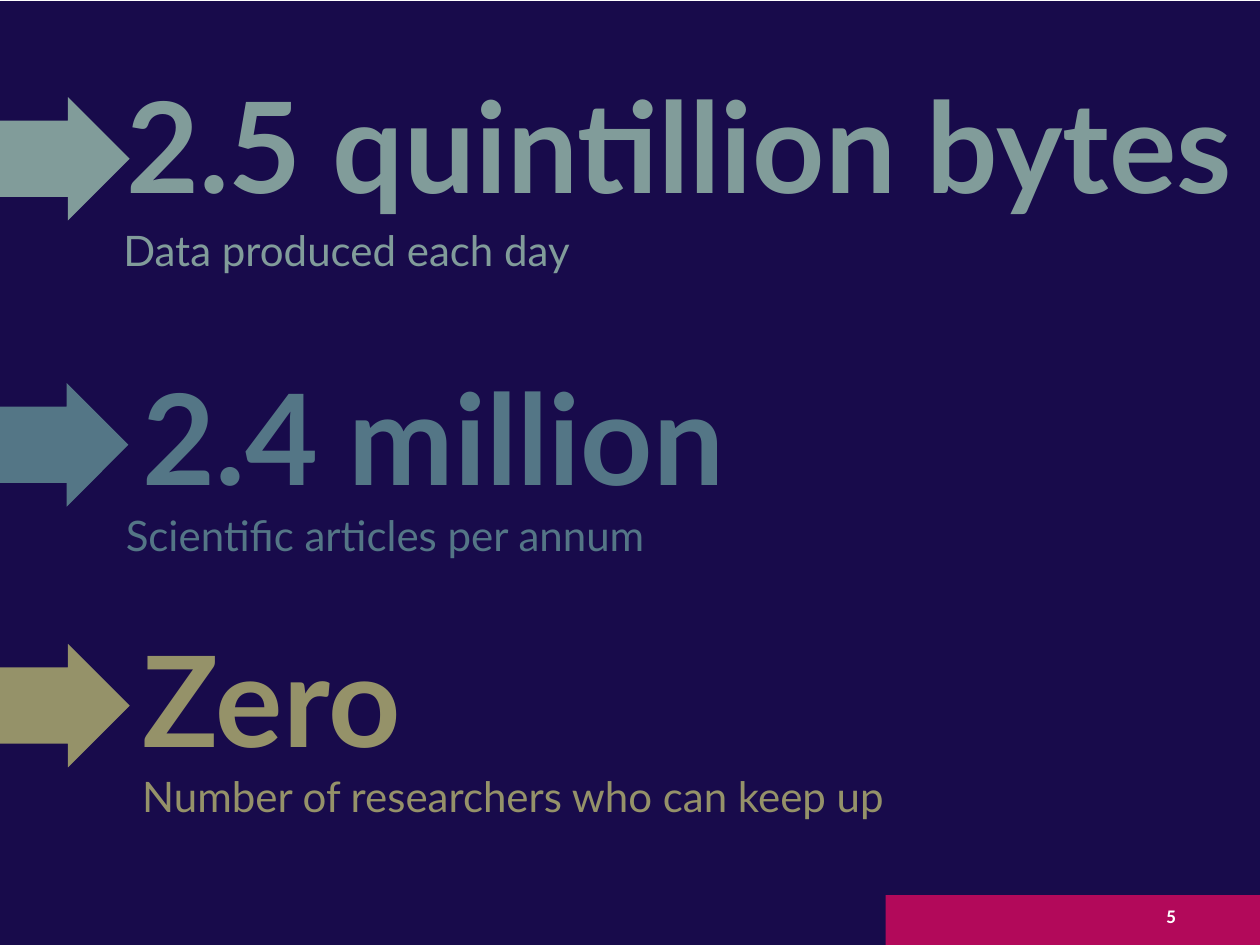
from pptx import Presentation
from pptx.dml.color import RGBColor
from pptx.enum.shapes import MSO_SHAPE
from pptx.enum.text import MSO_ANCHOR, MSO_AUTO_SIZE, PP_ALIGN
from pptx.util import Inches, Pt

RECTANGLE = MSO_SHAPE.RECTANGLE
RIGHT_ARROW = MSO_SHAPE.RIGHT_ARROW
TOP, BOTTOM = MSO_ANCHOR.TOP, MSO_ANCHOR.BOTTOM
LEFT = PP_ALIGN.LEFT
NO_AUTOFIT = MSO_AUTO_SIZE.NONE

NAVY = RGBColor(0x18, 0x0B, 0x4B)
MAGENTA = RGBColor(0xB2, 0x09, 0x5A)
SAGE = RGBColor(0x81, 0x9C, 0x9A)
TEAL = RGBColor(0x54, 0x76, 0x86)
OLIVE = RGBColor(0x95, 0x92, 0x69)
WHITE = RGBColor(0xFF, 0xFF, 0xFF)


class SlideBuilder:
    """Holds the text style and the slide being filled."""

    font_name = "Lato"
    inset = 0.1
    line_spacing = 0.9

    def __init__(self, slide):
        self.slide = slide

    def block(self, kind, left, top, width, height, color, line_width=None):
        shape = self.slide.shapes.add_shape(
            kind, Inches(left), Inches(top), Inches(width), Inches(height))
        shape.shadow.inherit = False
        shape.fill.solid()
        shape.fill.fore_color.rgb = color
        if line_width:
            shape.line.color.rgb = color
            shape.line.width = Pt(line_width)
        else:
            shape.line.fill.background()
        return shape

    def arrow(self, left, top, color):
        shape = self.block(RIGHT_ARROW, left, top, 1.03, 0.98, color)
        shape.adjustments[0] = 0.618
        shape.adjustments[1] = 0.5

    def format_text(self, shape, text, size, color, bold, anchor):
        frame = shape.text_frame
        frame.text = text
        frame.word_wrap = True
        frame.auto_size = NO_AUTOFIT
        frame.vertical_anchor = anchor
        frame.margin_left = frame.margin_right = Inches(self.inset)
        frame.margin_top = frame.margin_bottom = Inches(self.inset)
        paragraph = frame.paragraphs[0]
        paragraph.alignment = LEFT
        paragraph.line_spacing = self.line_spacing
        font = paragraph.runs[0].font
        font.name, font.size, font.bold = self.font_name, Pt(size), bold
        font.color.rgb = color

    def text(self, text, left, top, width, height, size, color,
             bold=False, anchor=TOP):
        box = self.slide.shapes.add_textbox(
            Inches(left), Inches(top), Inches(width), Inches(height))
        self.format_text(box, text, size, color, bold, anchor)
        return box

    def title(self, text, left, top, width, height, size, color):
        title = self.slide.shapes.title
        title.left, title.top = Inches(left), Inches(top)
        title.width, title.height = Inches(width), Inches(height)
        self.format_text(title, text, size, color, True, BOTTOM)
        # Bring the title in front of the background panel
        title.element.getparent().append(title.element)

    def page_number(self, number):
        box = self.text(number, 9.16, 7.13, 0.6, 0.4, 11, WHITE, bold=True)
        box.text_frame.margin_top = box.text_frame.margin_bottom = Inches(0.05)
        paragraph = box.text_frame.paragraphs[0]
        paragraph.line_spacing = 1.0
        paragraph.runs[0].font.name = "Calibri"


def main():
    presentation = Presentation()
    presentation.slide_width = Inches(10)
    presentation.slide_height = Inches(7.5)
    slide = presentation.slides.add_slide(presentation.slide_layouts[5])
    builder = SlideBuilder(slide)

    # Footer bands and background panel
    builder.block(RECTANGLE, 0, 7.09, 10, 0.41, NAVY)
    builder.block(RECTANGLE, 7.03, 7.09, 2.97, 0.41, MAGENTA)
    builder.block(RECTANGLE, 0, 0.02, 10, 7.07, NAVY, line_width=2)

    # Lead figure as the title
    builder.title("2.5 quintillion bytes", 0.9, 0.54, 9.2, 1.31, 72, SAGE)

    # Other large figures
    for figure, top, color in (("2.4 million", 2.86, TEAL),
                               ("Zero", 4.94, OLIVE)):
        builder.text(figure, 1.03, top, 8.22, 1.31, 72, color, True, BOTTOM)

    # Captions
    for caption, left, top, color in (
            ("Data produced each day", 0.88, 1.73, SAGE),
            ("Scientific articles per annum", 0.9, 3.99, TEAL),
            ("Number of researchers who can keep up", 1.03, 6.06, OLIVE)):
        builder.text(caption, left, top, 8.22, 0.68, 24, color)

    # Arrows from the left edge
    for left, top, color in ((0, 0.77, SAGE), (-0.01, 3.04, TEAL),
                             (0, 5.11, OLIVE)):
        builder.arrow(left, top, color)

    builder.page_number("5")
    presentation.save("out.pptx")


if __name__ == "__main__":
    main()
